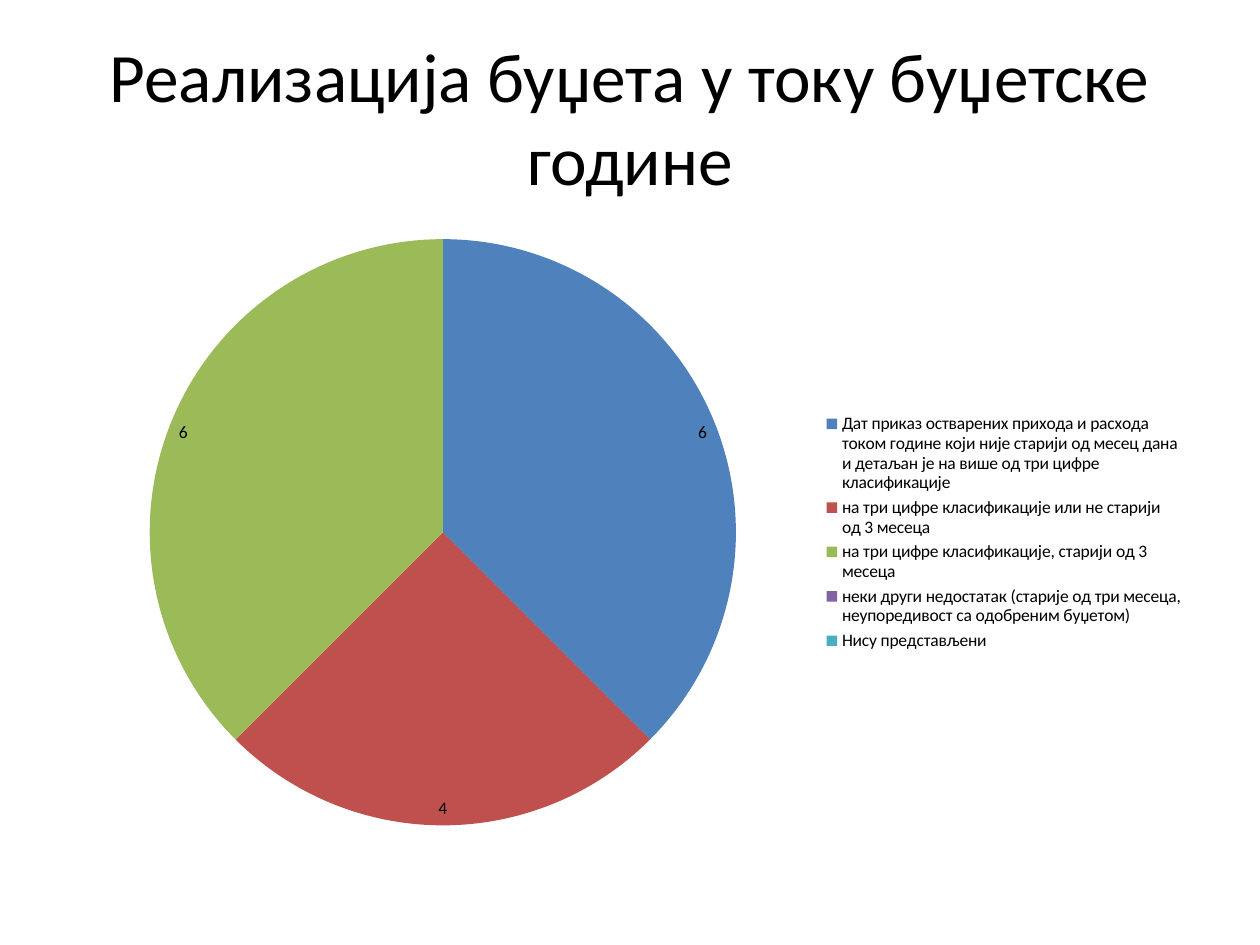
from dataclasses import dataclass

from lxml import etree
from pptx import Presentation
from pptx.chart.data import CategoryChartData
from pptx.dml.color import RGBColor
from pptx.enum.chart import XL_CHART_TYPE, XL_LABEL_POSITION, XL_LEGEND_POSITION
from pptx.enum.text import MSO_ANCHOR, PP_ALIGN
from pptx.oxml.ns import qn
from pptx.util import Inches, Pt

PIE = XL_CHART_TYPE.PIE
INSIDE_END = XL_LABEL_POSITION.INSIDE_END
LEGEND_RIGHT = XL_LEGEND_POSITION.RIGHT
MIDDLE = MSO_ANCHOR.MIDDLE
CENTER = PP_ALIGN.CENTER


@dataclass(frozen=True)
class Theme:
    font: str = "Calibri"
    text: str = "000000"
    title_size: float = 39.6
    chart_size: float = 10
    slices: tuple = ("4F81BD", "C0504D", "9BBB59", "8064A2", "4BACC6")


THEME = Theme()
SLIDE_WIDTH, SLIDE_HEIGHT = Inches(10), Inches(7.5)

# Shares of the slide: left, top, width, height
TITLE_AREA = (0.05, 0.04, 0.9, 1 / 6)
CHART_AREA = (0.05, 0.7 / 3, 0.9, 0.66)
# Shares of the chart
PIE_AREA = {"x": 0.075, "y": 0.03, "w": 0.52, "h": 0.94}

TITLE = "Реализација буџета у току буџетске године"
RESULTS = {
    "Дат приказ остварених прихода и расхода током године који није "
    "старији од месец дана и детаљан је на више од три цифре класификације": 6,
    "на три цифре класификације или не старији од 3 месеца": 4,
    "на три цифре класификације, старији од 3 месеца": 6,
    "неки други недостатак (старије од три месеца, "
    "неупоредивост са одобреним буџетом)": 0,
    "Нису представљени": 0,
}


def place(area):
    left, top, width, height = area
    return (round(left * SLIDE_WIDTH), round(top * SLIDE_HEIGHT),
            round(width * SLIDE_WIDTH), round(height * SLIDE_HEIGHT))


def style_font(font, size):
    font.name = THEME.font
    font.size = Pt(size)
    font.color.rgb = RGBColor.from_string(THEME.text)


def add_title(slide, text):
    title = slide.shapes.title
    title.left, title.top, title.width, title.height = place(TITLE_AREA)
    frame = title.text_frame
    frame.word_wrap = True
    frame.vertical_anchor = MIDDLE
    paragraph = frame.paragraphs[0]
    paragraph.alignment = CENTER
    run = paragraph.add_run()
    run.text = text
    style_font(run.font, THEME.title_size)


def fix_plot_area(chart, area):
    """Pin the inner plot area to the given shares of the chart."""
    plot_area = chart.plots[0]._element.getparent()
    for old_layout in plot_area.findall(qn("c:layout")):
        plot_area.remove(old_layout)
    layout = etree.Element(qn("c:layout"))
    manual = etree.SubElement(layout, qn("c:manualLayout"))
    settings = {"layoutTarget": "inner", "xMode": "edge", "yMode": "edge", **area}
    for tag, value in settings.items():
        etree.SubElement(manual, qn(f"c:{tag}")).set("val", str(value))
    plot_area.insert(0, layout)


def add_pie(slide, results):
    data = CategoryChartData()
    data.categories = list(results)
    data.add_series("Series 1", list(results.values()))
    chart = slide.shapes.add_chart(PIE, *place(CHART_AREA), data).chart
    chart.has_title = False
    style_font(chart.font, THEME.chart_size)

    chart.has_legend = True
    chart.legend.position = LEGEND_RIGHT
    chart.legend.include_in_layout = False

    plot = chart.plots[0]
    plot.vary_by_categories = True
    for index, color in enumerate(THEME.slices):
        fill = plot.series[0].points[index].format.fill
        fill.solid()
        fill.fore_color.rgb = RGBColor.from_string(color)

    plot.has_data_labels = True
    labels = plot.data_labels
    labels.show_value = True
    labels.show_percentage = False
    labels.position = INSIDE_END
    labels.number_format = "0;-0;;"  # zero values get no label
    labels.number_format_is_linked = False
    style_font(labels.font, THEME.chart_size)
    fix_plot_area(chart, PIE_AREA)


def main():
    deck = Presentation()
    deck.slide_width, deck.slide_height = SLIDE_WIDTH, SLIDE_HEIGHT
    title_only = deck.slide_layouts[5]
    slide = deck.slides.add_slide(title_only)
    add_title(slide, TITLE)
    add_pie(slide, RESULTS)
    deck.save("out.pptx")


if __name__ == "__main__":
    main()
